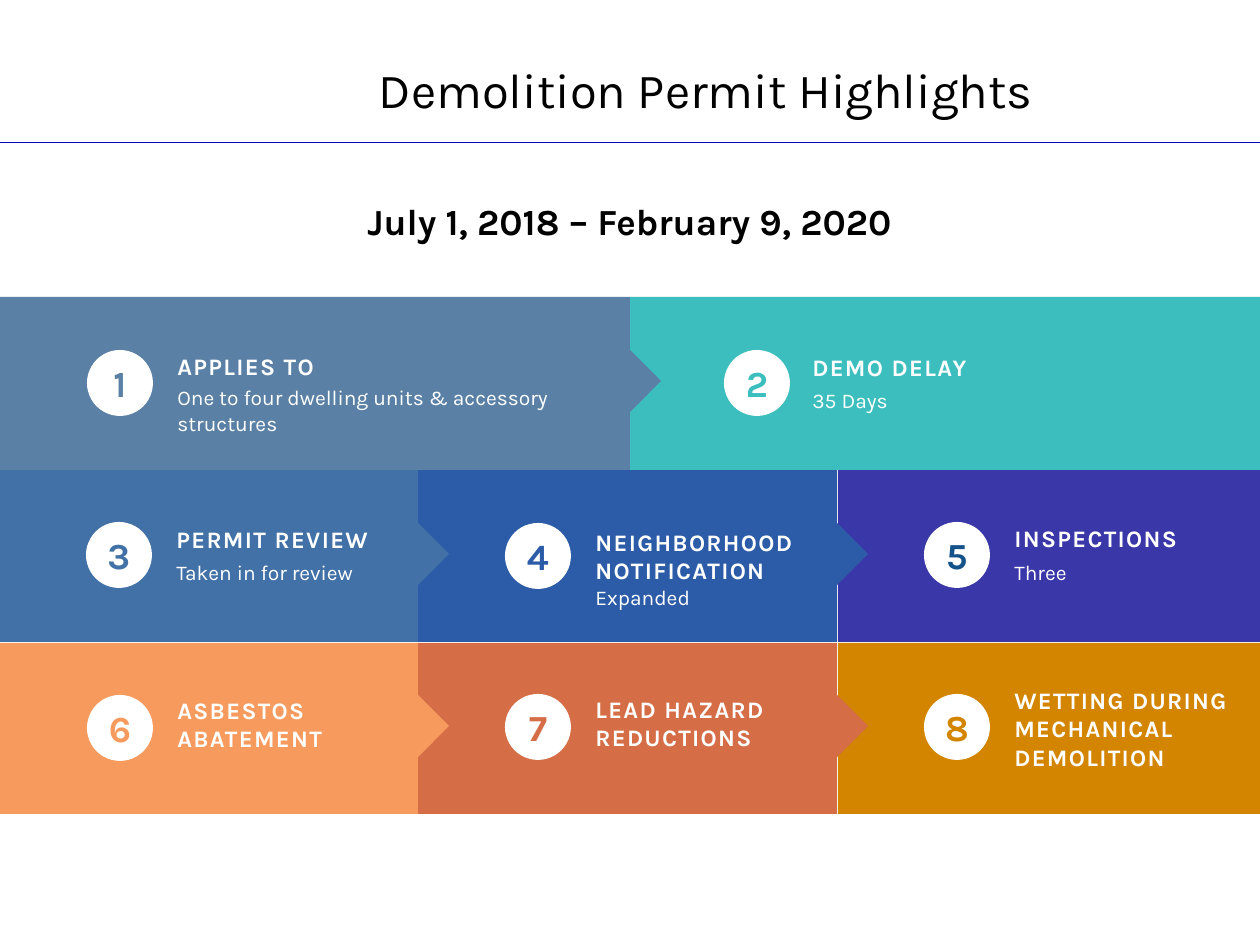
from dataclasses import dataclass

from pptx import Presentation
from pptx.dml.color import RGBColor
from pptx.enum.shapes import MSO_CONNECTOR, MSO_SHAPE
from pptx.enum.text import MSO_ANCHOR, PP_ALIGN
from pptx.oxml.ns import qn
from pptx.util import Emu, Pt

RECTANGLE, ELLIPSE = MSO_SHAPE.RECTANGLE, MSO_SHAPE.OVAL
STRAIGHT = MSO_CONNECTOR.STRAIGHT
LEFT, CENTER = PP_ALIGN.LEFT, PP_ALIGN.CENTER
TOP, MIDDLE = MSO_ANCHOR.TOP, MSO_ANCHOR.MIDDLE

PX_PER_INCH = 126
BADGE_SIZE = 66
ARROW_SIZE = 44
LINE_HEIGHT = 33


@dataclass(frozen=True)
class Theme:
    font: str = "Karla"
    black: str = "000000"
    white: str = "FFFFFF"
    rule: str = "0000B7"
    slate: str = "5A81A5"
    teal: str = "3DBEBE"
    steel: str = "4171A6"
    blue: str = "2C5CA7"
    indigo: str = "3A37A9"
    navy: str = "14528A"
    peach: str = "F79A5D"
    rust: str = "D56E47"
    amber: str = "D38500"
    title_size: float = 28
    large_size: float = 21
    heading_size: float = 13.5
    detail_size: float = 12
    heading_spacing: int = 80


@dataclass(frozen=True)
class Step:
    number: int
    color: str
    band: tuple
    badge: tuple
    heading: tuple
    heading_top: int
    heading_height: int = LINE_HEIGHT
    detail: str = ""
    detail_top: int = 0
    detail_size: tuple = (237, LINE_HEIGHT)
    arrow_center: int = 0
    number_color: str = ""
    text_offset: int = 78


def px(length):
    return Emu(round(length * 914400 / PX_PER_INCH))


class SlideBuilder:
    def __init__(self, slide, theme):
        self.slide = slide
        self.theme = theme

    def rule(self, y, width):
        line = self.slide.shapes.add_connector(STRAIGHT, 0, px(y), px(width), px(y))
        line.line.color.rgb = RGBColor.from_string(self.theme.rule)
        line.line.width = Pt(0.5)
        properties = line._element.spPr
        properties.append(properties.makeelement(qn("a:effectLst"), {}))

    def solid(self, kind, box, color, rotation=0):
        shape = self.slide.shapes.add_shape(kind, *map(px, box))
        shape.fill.solid()
        shape.fill.fore_color.rgb = RGBColor.from_string(color)
        shape.line.fill.background()
        shape.shadow.inherit = False
        shape.rotation = rotation
        return shape

    def fill_text(self, shape, lines, size, color, bold=False, align=LEFT,
                  anchor=MIDDLE, wrap=True, spacing=0, **frame_format):
        frame = shape.text_frame
        frame_format.update(vertical_anchor=anchor, word_wrap=wrap)
        for name, value in frame_format.items():
            setattr(frame, name, value)
        font_format = {"name": self.theme.font, "size": Pt(size), "bold": bold}
        for index, line in enumerate(lines):
            paragraph = frame.add_paragraph() if index else frame.paragraphs[0]
            paragraph.alignment = align
            run = paragraph.add_run()
            run.text = line
            for name, value in font_format.items():
                setattr(run.font, name, value)
            run.font.color.rgb = RGBColor.from_string(color)
            if spacing:
                run._r.get_or_add_rPr().set("spc", str(spacing))

    def text(self, box, lines, size, color, **text_format):
        shape = self.slide.shapes.add_textbox(*map(px, box))
        self.fill_text(shape, lines, size, color, **text_format)

    def badge(self, position, number, color):
        shape = self.solid(ELLIPSE, (*position, BADGE_SIZE, BADGE_SIZE), self.theme.white)
        self.fill_text(shape, [str(number)], self.theme.large_size, color, bold=True,
                       align=CENTER, margin_left=0, margin_right=0)

    def arrow(self, center_x, center_y, color):
        """Draw the band's pointer as a square turned by 45 degrees."""
        half = ARROW_SIZE / 2
        self.solid(RECTANGLE, (center_x - half, center_y - half, ARROW_SIZE, ARROW_SIZE),
                   color, rotation=45)

    def step(self, step):
        theme = self.theme
        self.solid(RECTANGLE, step.band, step.color)
        self.badge(step.badge, step.number, step.number_color or step.color)
        if step.arrow_center:
            self.arrow(step.band[0] + step.band[2], step.arrow_center, step.color)
        text_left = step.badge[0] + step.text_offset
        self.text((text_left, step.heading_top, 240, step.heading_height), step.heading,
                  theme.heading_size, theme.white, bold=True,
                  spacing=theme.heading_spacing)
        if step.detail:
            self.text((text_left, step.detail_top, *step.detail_size), [step.detail],
                      theme.detail_size, theme.white)


def steps_back_to_front(theme):
    """Later bands cover the edges of earlier ones."""
    return [
        Step(5, theme.indigo, (838, 441, 422, 201), (924, 522), ("INSPECTIONS",), 522,
             detail="Three", detail_top=556, number_color=theme.navy),
        Step(4, theme.blue, (418, 442, 419, 200), (505, 523),
             ("NEIGHBORHOOD", "NOTIFICATION"), 527, 58,
             detail="Expanded", detail_top=581, arrow_center=554),
        Step(3, theme.steel, (0, 469, 418, 173), (86, 522), ("PERMIT REVIEW",), 523,
             detail="Taken in for review", detail_top=556, arrow_center=554),
        Step(2, theme.teal, (630, 297, 630, 173), (724, 350), ("DEMO DELAY",), 351,
             detail="35 Days", detail_top=384, text_offset=76),
        Step(1, theme.slate, (0, 297, 630, 173), (87, 350), ("APPLIES TO",), 350,
             detail="One to four dwelling units & accessory structures",
             detail_top=383, detail_size=(401, 54), arrow_center=381),
        Step(8, theme.amber, (838, 643, 422, 171), (924, 694),
             ("WETTING DURING", "MECHANICAL DEMOLITION"), 667, 123),
        Step(7, theme.rust, (418, 643, 419, 171), (505, 694),
             ("LEAD HAZARD", "REDUCTIONS"), 694, 58, arrow_center=726),
        Step(6, theme.peach, (0, 643, 418, 171), (87, 695),
             ("ASBESTOS ABATEMENT",), 695, 58, arrow_center=726),
    ]


def main():
    presentation = Presentation()
    presentation.slide_width, presentation.slide_height = px(1260), px(945)
    theme = Theme()
    slide = presentation.slides.add_slide(presentation.slide_layouts[6])
    builder = SlideBuilder(slide, theme)
    builder.rule(142, 1260)
    builder.text((362, 53, 687, 131), ["Demolition Permit Highlights"],
                 theme.title_size, theme.black, align=CENTER, anchor=TOP)
    builder.text((346, 193, 567, 57), ["July 1, 2018 – February 9, 2020"],
                 theme.large_size, theme.black, bold=True, align=CENTER,
                 anchor=TOP, wrap=False)
    for step in steps_back_to_front(theme):
        builder.step(step)
    presentation.save("out.pptx")


if __name__ == "__main__":
    main()
